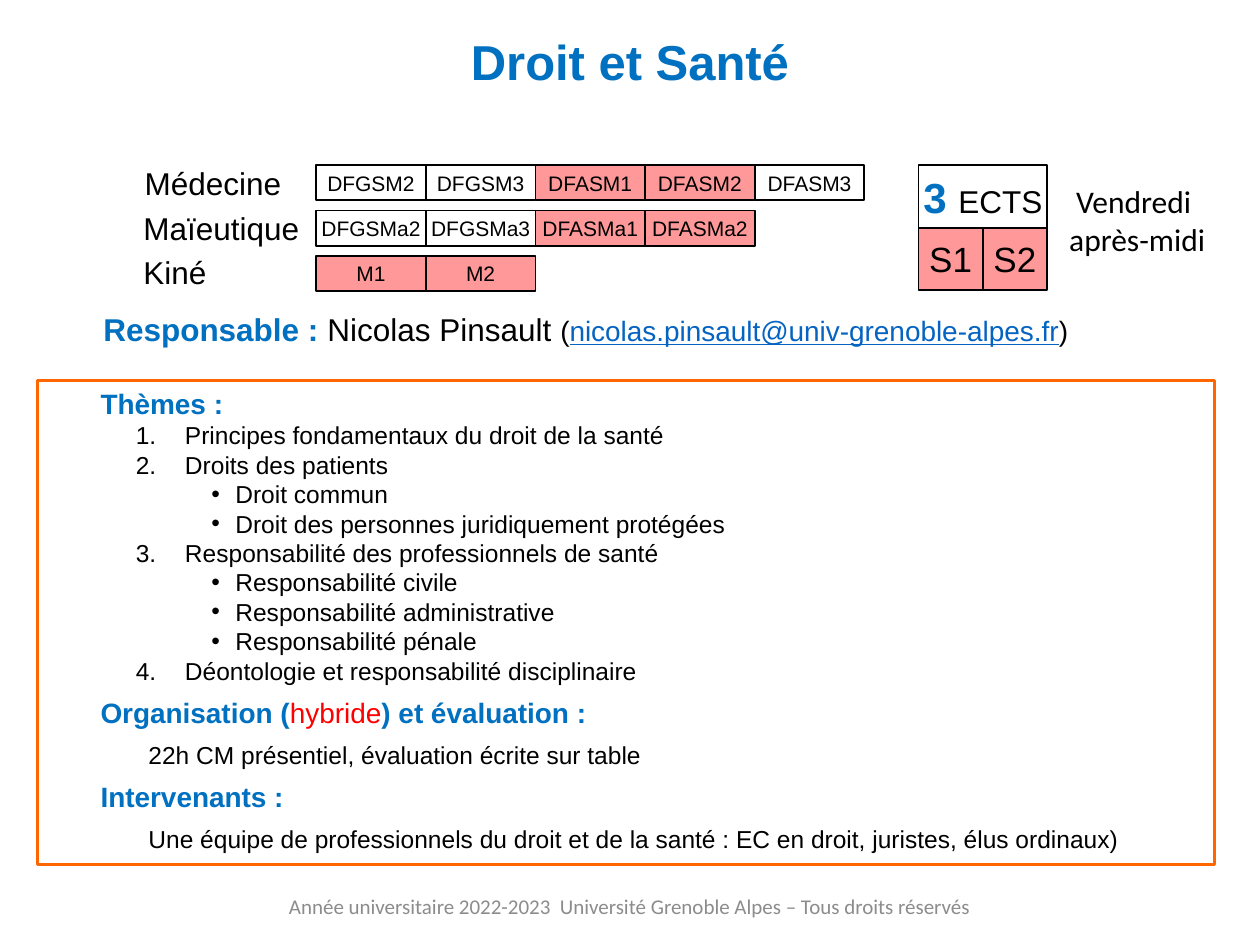
"""Build the course sheet slide "Droit et Santé"."""
from lxml.etree import SubElement
from pptx import Presentation
from pptx.dml.color import RGBColor
from pptx.enum.shapes import MSO_SHAPE as Shape
from pptx.enum.text import MSO_ANCHOR as Anchor, PP_ALIGN as Align
from pptx.oxml.ns import qn
from pptx.util import Inches, Pt

BLUE, BLACK, WHITE, PINK = "0070C0", "000000", "FFFFFF", "FF9999"


def color(value):
    return RGBColor.from_string(value)


def write(para, spans, align=Align.LEFT, font="Arial"):
    para.alignment = align
    for text, size, tint, bold in spans:
        span = para.add_run()
        span.text = text
        span.font.name = font
        span.font.size = Pt(size)
        span.font.bold = bold
        span.font.color.rgb = color(tint)


deck = Presentation()
deck.slide_width, deck.slide_height = Inches(10), Inches(7.5)
page = deck.slides.add_slide(deck.slide_layouts[6])

texts = [
    (0, 0.2, 10, 0.57, "Droit et Santé", 28, BLUE, True, Align.CENTER, "Arial"),
    (2, 6.99, 6, 0.4, "Année universitaire 2022-2023  Université Grenoble Alpes – Tous droits réservés",
     12, "8C8C8C", False, Align.CENTER, "Calibri"),
    (1.05, 1.25, 1.44, 0.4, "Médecine", 18, BLACK, False, Align.LEFT, "Arial"),
    (1.04, 1.61, 1.44, 0.4, "Maïeutique", 18, BLACK, False, Align.LEFT, "Arial"),
    (1.04, 1.96, 1.44, 0.4, "Kiné", 18, BLACK, False, Align.LEFT, "Arial"),
    (8.37, 1.39, 1.31, 0.71, "Vendredi  après-midi", 18, BLACK, False, Align.CENTER, "Calibri"),
]
for left, top, width, height, text, size, tint, bold, align, font in texts:
    box = page.shapes.add_textbox(Inches(left), Inches(top), Inches(width), Inches(height))
    box.text_frame.word_wrap = True
    box.text_frame.vertical_anchor = Anchor.MIDDLE
    write(box.text_frame.paragraphs[0], [(text, size, tint, bold)], align, font)

years = [
    [("DFGSM2", WHITE), ("DFGSM3", WHITE), ("DFASM1", PINK), ("DFASM2", PINK), ("DFASM3", WHITE)],
    [("DFGSMa2", WHITE), ("DFGSMa3", WHITE), ("DFASMa1", PINK), ("DFASMa2", PINK)],
    [("M1", PINK), ("M2", PINK)],
]
cells = [
    (2.51 + 0.87 * column, 1.31 + 0.36 * row, 0.87, 0.28, fill, [(name, 12, BLACK, False)])
    for row, names in enumerate(years)
    for column, (name, fill) in enumerate(names)
]
cells += [
    (7.29, 1.31, 1.02, 0.5, WHITE, [("3 ", 24, BLUE, True), ("ECTS", 18, BLACK, False)]),
    (7.29, 1.81, 0.51, 0.49, PINK, [("S1", 20, BLACK, False)]),
    (7.8, 1.81, 0.51, 0.49, PINK, [("S2", 20, BLACK, False)]),
]
for left, top, width, height, fill, spans in cells:
    cell = page.shapes.add_shape(Shape.RECTANGLE, Inches(left), Inches(top), Inches(width), Inches(height))
    cell.shadow.inherit = False
    cell.fill.solid()
    cell.fill.fore_color.rgb = color(fill)
    cell.line.color.rgb = color(BLACK)
    cell.line.width = Pt(1)
    frame = cell.text_frame
    frame.margin_left = frame.margin_right = frame.margin_top = frame.margin_bottom = 0
    frame.word_wrap = False
    frame.vertical_anchor = Anchor.MIDDLE
    write(frame.paragraphs[0], spans, Align.CENTER)

contact = page.shapes.add_textbox(Inches(0.82), Inches(2.46), Inches(9.18), Inches(0.3))
frame = contact.text_frame
frame.word_wrap = True
frame.margin_left = frame.margin_top = frame.margin_bottom = 0
write(frame.paragraphs[0], [
    ("Responsable : ", 18, BLUE, True),
    ("Nicolas Pinsault ", 18, BLACK, False),
    ("(", 16, BLACK, False),
    ("nicolas.pinsault@univ-grenoble-alpes.fr", 16, "0563C1", False),
    (")", 16, BLACK, False),
])
frame.paragraphs[0].runs[3].font.underline = True

program = page.shapes.add_shape(Shape.RECTANGLE, Inches(0.3), Inches(3.02), Inches(9.34), Inches(3.84))
program.shadow.inherit = False
program.fill.background()
program.line.color.rgb = color("FF6600")
program.line.width = Pt(1.5)
frame = program.text_frame
frame.word_wrap = True
frame.vertical_anchor = Anchor.TOP

styles = {
    "heading": (0, 0.4, 0, 6, 16, BLUE, True),
    "theme": (0, 1.07, -0.39, 0, 14, BLACK, False),
    "detail": (2, 1.47, -0.19, 0, 14, BLACK, False),
    "body": (0, 0.78, 0, 6, 14, BLACK, False),
}
lines = [
    ("heading", "Thèmes :"),
    ("theme", "Principes fondamentaux du droit de la santé"),
    ("theme", "Droits des patients"),
    ("detail", "Droit commun"),
    ("detail", "Droit des personnes juridiquement protégées"),
    ("theme", "Responsabilité des professionnels de santé"),
    ("detail", "Responsabilité civile"),
    ("detail", "Responsabilité administrative"),
    ("detail", "Responsabilité pénale"),
    ("theme", "Déontologie et responsabilité disciplinaire"),
    ("heading", "Organisation (|hybride|) et évaluation :"),
    ("body", "22h CM présentiel, évaluation écrite sur table"),
    ("heading", "Intervenants :"),
    ("body", "Une équipe de professionnels du droit et de la santé : EC en droit, juristes, élus ordinaux)"),
]
for index, (kind, text) in enumerate(lines):
    level, margin, indent, before, size, tint, bold = styles[kind]
    para = frame.add_paragraph() if index else frame.paragraphs[0]
    para.level = level
    para.space_before = Pt(before)
    write(para, [
        (part, size, "FF0000" if place == 1 else tint, bold and place != 1)
        for place, part in enumerate(text.split("|"))
    ])
    props = para._p.get_or_add_pPr()
    props.set("marL", str(Inches(margin)))
    props.set("indent", str(Inches(indent)))
    if kind == "theme":
        SubElement(props, qn("a:buFont"), typeface="+mj-lt")
        SubElement(props, qn("a:buAutoNum"), type="arabicPeriod")
    elif kind == "detail":
        SubElement(props, qn("a:buFont"), typeface="Arial")
        SubElement(props, qn("a:buChar"), char="•")

deck.save("out.pptx")
